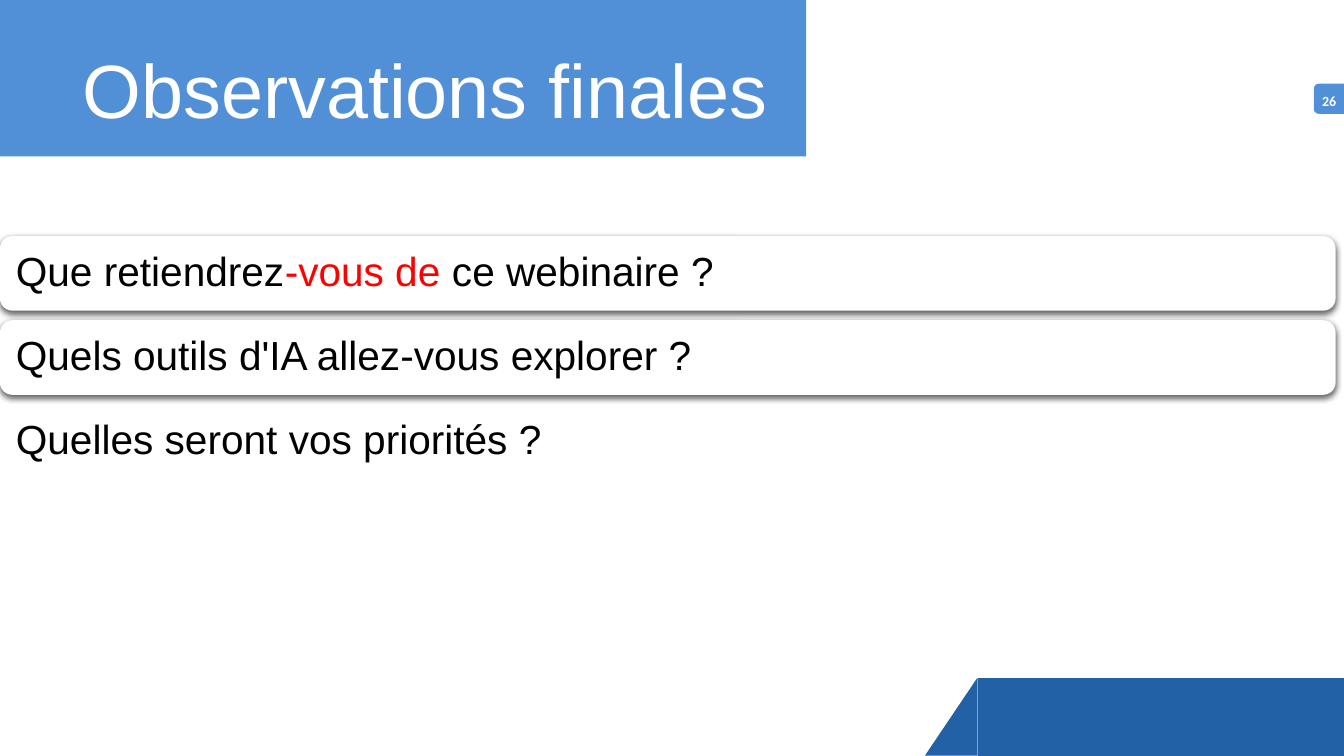
from lxml.etree import SubElement
from pptx import Presentation
from pptx.dml.color import RGBColor
from pptx.enum.shapes import MSO_SHAPE
from pptx.enum.text import MSO_ANCHOR, PP_ALIGN
from pptx.oxml.ns import qn
from pptx.util import Cm, Pt

BLUE, NAVY, WHITE, BLACK, RED = "5190D7", "2361A7", "FFFFFF", "000000", "FF0000"

deck = Presentation()
deck.slide_width, deck.slide_height = Cm(33.87), Cm(19.05)
slide = deck.slides.add_slide(deck.slide_layouts[5])
shapes = slide.shapes


def draw(kind, box, fill, turn=0):
    shape = shapes.add_shape(kind, *map(Cm, box))
    shape.shadow.inherit = False
    shape.fill.solid()
    shape.fill.fore_color.rgb = RGBColor.from_string(fill)
    shape.line.fill.background()
    shape.rotation = turn
    return shape


def write(shape, text, pads, size=29, font="Arial", bold=False,
          anchor=MSO_ANCHOR.MIDDLE, wrap=True, lead=1.0):
    """Fill a shape with (words, colour) runs; pads are left, top, right, bottom in cm."""
    frame = shape.text_frame
    frame.word_wrap = wrap
    frame.vertical_anchor = anchor
    (frame.margin_left, frame.margin_top,
     frame.margin_right, frame.margin_bottom) = map(Cm, pads)
    para = frame.paragraphs[0]
    para.alignment = PP_ALIGN.LEFT
    para.line_spacing = lead
    for words, color in text:
        run = para.add_run()
        run.text = words
        run.font.size, run.font.name, run.font.bold = Pt(size), font, bold
        run.font.color.rgb = RGBColor.from_string(color)


# Corner, title band and page tab
draw(MSO_SHAPE.RECTANGLE, (24.64, 17.09, 9.23, 1.96), NAVY)
draw(MSO_SHAPE.RIGHT_TRIANGLE, (22.99, 17.4, 1.96, 1.32), NAVY, 270)
draw(MSO_SHAPE.RECTANGLE, (0, 0, 20.32, 3.94), BLUE)
tab = draw(MSO_SHAPE.ROUND_2_SAME_RECTANGLE, (33.11, 2.11, 0.76, 0.76), BLUE, 270)
tab.adjustments[0], tab.adjustments[1] = 0.167, 0
page = shapes.add_textbox(Cm(33.07), Cm(2.21), Cm(0.8), Cm(0.66))
write(page, [("26", WHITE)], (0.25, 0.13, 0, 0.13), size=10, font="Calibri",
      bold=True, anchor=MSO_ANCHOR.TOP, wrap=False)

# Questions; the last one has no card behind it
rows = [
    [("Que retiendrez", BLACK), ("-vous de ", RED), ("ce webinaire ?", BLACK)],
    [("Quels outils d'IA allez-vous explorer ?", BLACK)],
    [("Quelles seront vos priorités ?", BLACK)],
]
for i, row in enumerate(rows):
    top = 6.04 + i * 2.12
    if i < len(rows) - 1:
        card = draw(MSO_SHAPE.ROUNDED_RECTANGLE, (0, top - 0.09, 33.66, 1.88), WHITE)
        card.adjustments[0] = 0.167
        effects = card.element.spPr.find(qn("a:effectLst"))
        shade = SubElement(effects, qn("a:outerShdw"), blurRad=str(Pt(4.5)),
                           dist=str(Pt(1.5)), dir="5400000", rotWithShape="0")
        tint = SubElement(shade, qn("a:srgbClr"), val=BLACK)
        SubElement(tint, qn("a:alpha"), val="62000")
    label = draw(MSO_SHAPE.RECTANGLE, (0.1, top, 33.48, 1.7), WHITE)
    write(label, row, (0.3, 0.3, 0.3, 0.3), lead=0.9)

# Title, brought in front of its band
title = shapes.title
title.left, title.top, title.width, title.height = map(Cm, (0.71, 0.76, 18.95, 2.36))
write(title, [("Observations finales", WHITE)], (1.37, 0.33, 0, 0), size=54,
      anchor=MSO_ANCHOR.TOP)
shapes.element.append(title.element)

deck.save("out.pptx")
